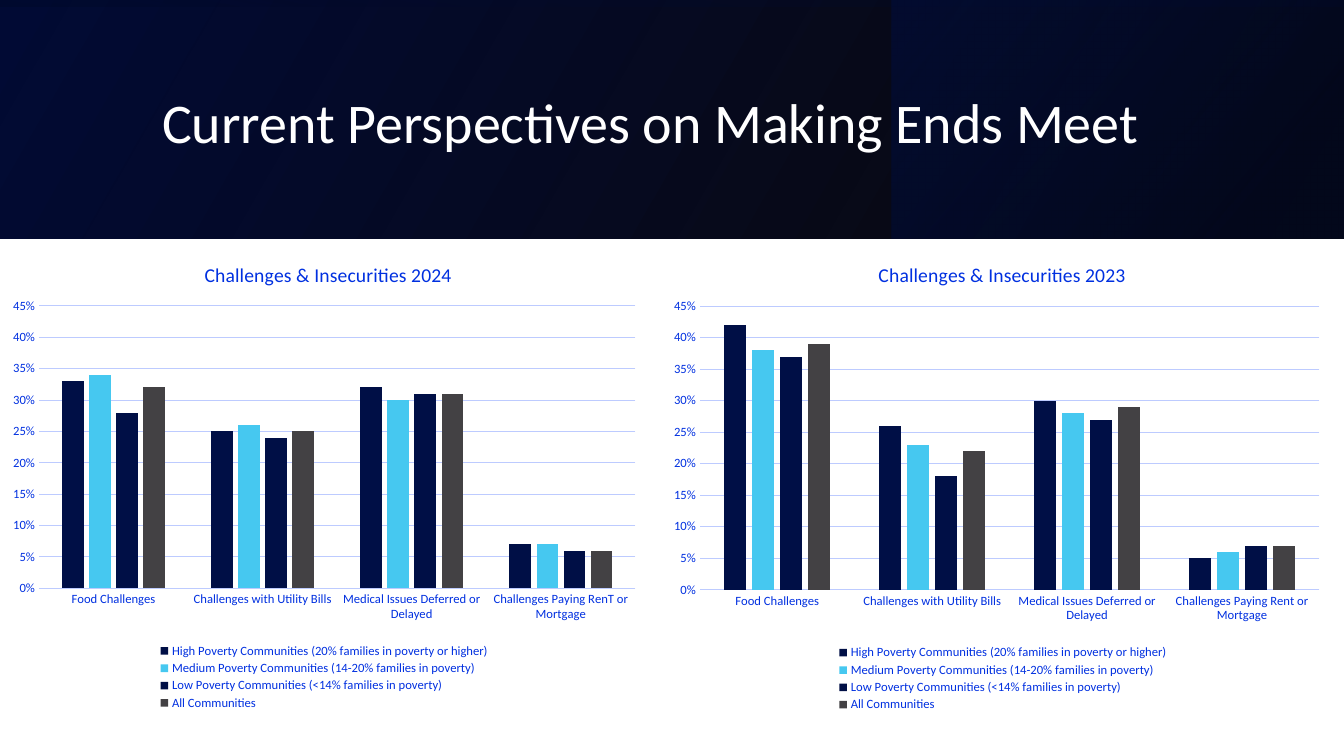
from dataclasses import dataclass

from lxml import etree
from pptx import Presentation
from pptx import util as u
from pptx.chart.data import CategoryChartData
from pptx.dml.color import RGBColor
from pptx.enum import chart as chart_enum, shapes, text
from pptx.oxml import ns


@dataclass(frozen=True)
class Theme:
    """Colours, font and type sizes."""
    font: str = "Calibri"
    white: str = "FFFFFF"
    black: str = "000000"
    navy: str = "000F46"
    deep: str = "000B35"
    night: str = "000723"
    sky: str = "46C8F0"
    gray: str = "434144"
    label: str = "0030E0"
    grid: str = "BDCBFF"
    title_size: float = 40
    heading_size: float = 14
    label_size: float = 9


THEME = Theme()
SERIES = [
    ("High Poverty Communities (20% families in poverty or higher)", THEME.navy),
    ("Medium Poverty Communities (14-20% families in poverty)", THEME.sky),
    ("Low Poverty Communities (<14% families in poverty)", THEME.navy),
    ("All Communities", THEME.gray),
]
CATEGORIES = ["Food Challenges", "Challenges with Utility Bills",
              "Medical Issues Deferred or Delayed"]
VALUES_2024 = [(0.33, 0.25, 0.32, 0.07), (0.34, 0.26, 0.30, 0.07),
               (0.28, 0.24, 0.31, 0.06), (0.32, 0.25, 0.31, 0.06)]
VALUES_2023 = [(0.42, 0.26, 0.30, 0.05), (0.38, 0.23, 0.28, 0.06),
               (0.37, 0.18, 0.27, 0.07), (0.39, 0.22, 0.29, 0.07)]


def rgb(value):
    """Turn a hex string into a colour."""
    return RGBColor.from_string(value)


def style_font(font, size, color):
    """Apply the theme font with a size and colour."""
    font.name, font.size, font.bold = THEME.font, u.Pt(size), False
    font.color.rgb = rgb(color)


def add_rectangle(slide, box):
    """Add a plain rectangle without line or shadow."""
    shape = slide.shapes.add_shape(shapes.MSO_SHAPE.RECTANGLE, *map(u.Inches, box))
    shape.shadow.inherit = False
    shape.line.fill.background()
    return shape


def add_gradient(slide, box, stops, angle, rotation=0):
    """Add a mirrored rectangle with a clockwise, part-transparent gradient."""
    shape = add_rectangle(slide, box)
    shape.rotation = rotation
    properties = shape._element.spPr
    properties.find(ns.qn("a:xfrm")).set("flipH", "1")
    shape.fill.gradient()
    shape.fill.gradient_angle = 360 - angle
    for stop, (position, color, _) in zip(shape.fill.gradient_stops, stops):
        stop.position = position
        stop.color.rgb = rgb(color)
    colors = properties.find(ns.qn("a:gradFill")).iter(ns.qn("a:srgbClr"))
    for element, (_, _, opacity) in zip(list(colors), stops):
        etree.SubElement(element, ns.qn("a:alpha")).set("val", str(opacity * 1000))


def add_banner(slide, box):
    """Layer the dark gradients and set the slide title on them."""
    left, top, width, height = box
    add_gradient(slide, box, [(0, THEME.black, 96), (1, THEME.deep, 100)], 330)
    side = 4.49
    add_gradient(slide, (left + width - side, top, side, height),
                 [(0.19, THEME.night, 68), (1, THEME.navy, 48)], 320)
    shift = (width - height) / 2
    add_gradient(slide, (left + shift, top - shift, height, width),
                 [(0.23, THEME.deep, 16), (0.99, THEME.black, 45)], 350, 270)
    title_box = (left + 1.51, top + 0.38, 10.63, 1.72)
    frame = slide.shapes.add_textbox(*map(u.Inches, title_box)).text_frame
    frame.word_wrap = True
    frame.vertical_anchor = text.MSO_ANCHOR.MIDDLE
    paragraph = frame.paragraphs[0]
    paragraph.line_spacing = 0.9
    run = paragraph.add_run()
    run.text = "Current Perspectives on Making Ends Meet"
    style_font(run.font, THEME.title_size, THEME.white)


def place(parent, index, inner=False, **fractions):
    """Give a chart part a manual layout in fractions of the chart."""
    for old in parent.findall(ns.qn("c:layout")):
        parent.remove(old)
    layout = etree.Element(ns.qn("c:layout"))
    manual = etree.SubElement(layout, ns.qn("c:manualLayout"))
    settings = [("layoutTarget", "inner")] if inner else []
    settings += [("xMode", "edge"), ("yMode", "edge")]
    settings += [(key, str(value)) for key, value in fractions.items()]
    for tag, value in settings:
        etree.SubElement(manual, ns.qn("c:" + tag)).set("val", value)
    parent.insert(index, layout)


def style_axes(chart):
    """Format the category and percentage axes."""
    for axis in (chart.category_axis, chart.value_axis):
        axis.major_tick_mark = axis.minor_tick_mark = chart_enum.XL_TICK_MARK.NONE
        style_font(axis.tick_labels.font, THEME.label_size, THEME.label)
    values = chart.value_axis
    values.minimum_scale, values.maximum_scale, values.major_unit = 0, 0.45, 0.05
    values.tick_labels.number_format = "0%"
    values.tick_labels.number_format_is_linked = False
    values.format.line.fill.background()
    for line in (chart.category_axis.format.line, values.major_gridlines.format.line):
        line.color.rgb = rgb(THEME.grid)
        line.width = u.Pt(0.75)


def add_challenge_chart(slide, box, year, last_category, rows, plot, edges):
    """Add one year's clustered columns with heading and legend."""
    data = CategoryChartData(number_format="0%")
    data.categories = CATEGORIES + [last_category]
    for (name, _), values in zip(SERIES, rows):
        data.add_series(name, values)
    chart = slide.shapes.add_chart(chart_enum.XL_CHART_TYPE.COLUMN_CLUSTERED,
                                   *map(u.Inches, box), data).chart
    style_font(chart.font, THEME.label_size, THEME.label)
    columns = chart.plots[0]
    columns.gap_width, columns.overlap = 219, -27
    columns.vary_by_categories = False
    for series, (_, color) in zip(columns.series, SERIES):
        series.format.fill.solid()
        series.format.fill.fore_color.rgb = rgb(color)
        series.invert_if_negative = False
    style_axes(chart)

    chart.has_title = True
    run = chart.chart_title.text_frame.paragraphs[0].add_run()
    run.text = f"Challenges & Insecurities {year}"
    style_font(run.font, THEME.heading_size, THEME.label)
    chart.chart_title.include_in_layout = False
    chart.has_legend = True
    chart.legend.position = chart_enum.XL_LEGEND_POSITION.BOTTOM
    chart.legend.include_in_layout = False
    style_font(chart.legend.font, THEME.label_size, THEME.label)

    title_x, legend_x = edges
    area = chart._chartSpace.find(ns.qn("c:chart"))
    place(area.find(ns.qn("c:title")), 1, x=title_x, y=0.04)
    place(area.find(ns.qn("c:plotArea")), 0, True, **dict(zip("xywh", plot)))
    place(area.find(ns.qn("c:legend")), 1, x=legend_x, y=0.84, w=0.52, h=0.15)


def main():
    """Build and save the slide."""
    presentation = Presentation()
    presentation.slide_width = u.Inches(13.33)
    presentation.slide_height = u.Inches(7.5)
    slide = presentation.slides.add_slide(presentation.slide_layouts[6])
    backdrop = add_rectangle(slide, (0, 0, 13.33, 7.5))
    backdrop.fill.solid()
    backdrop.fill.fore_color.rgb = rgb(THEME.white)
    add_banner(slide, (0, 0, 13.33, 2.37))
    add_challenge_chart(slide, (0, 2.37, 6.43, 4.75), 2024,
                        "Challenges Paying RenT or Mortgage", VALUES_2024,
                        (0.06, 0.14, 0.92, 0.59), (0.31, 0.24))
    add_challenge_chart(slide, (6.54, 2.37, 6.68, 4.77), 2023,
                        "Challenges Paying Rent or Mortgage", VALUES_2023,
                        (0.06, 0.14, 0.92, 0.59), (0.32, 0.25))
    presentation.save("out.pptx")


if __name__ == "__main__":
    main()
